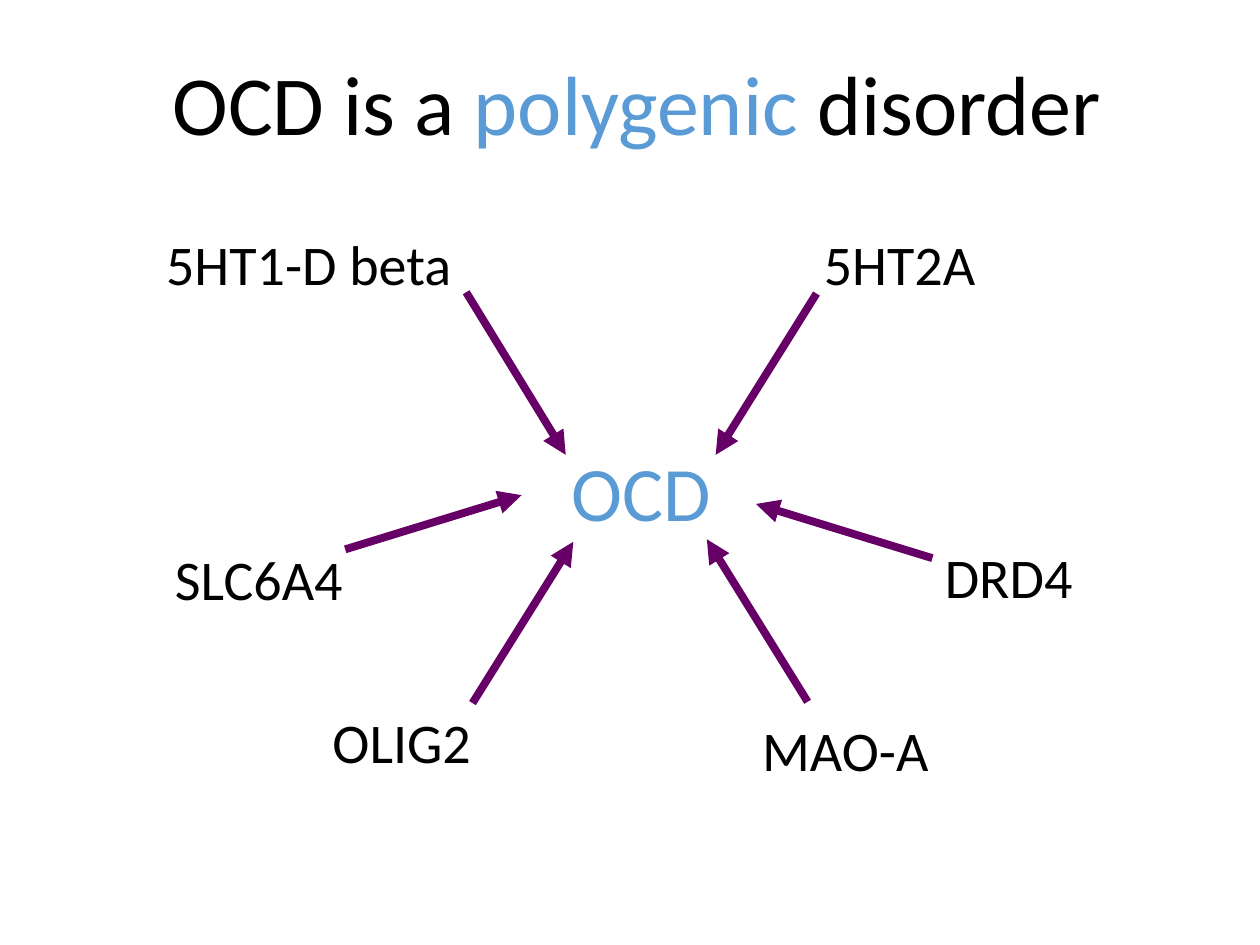
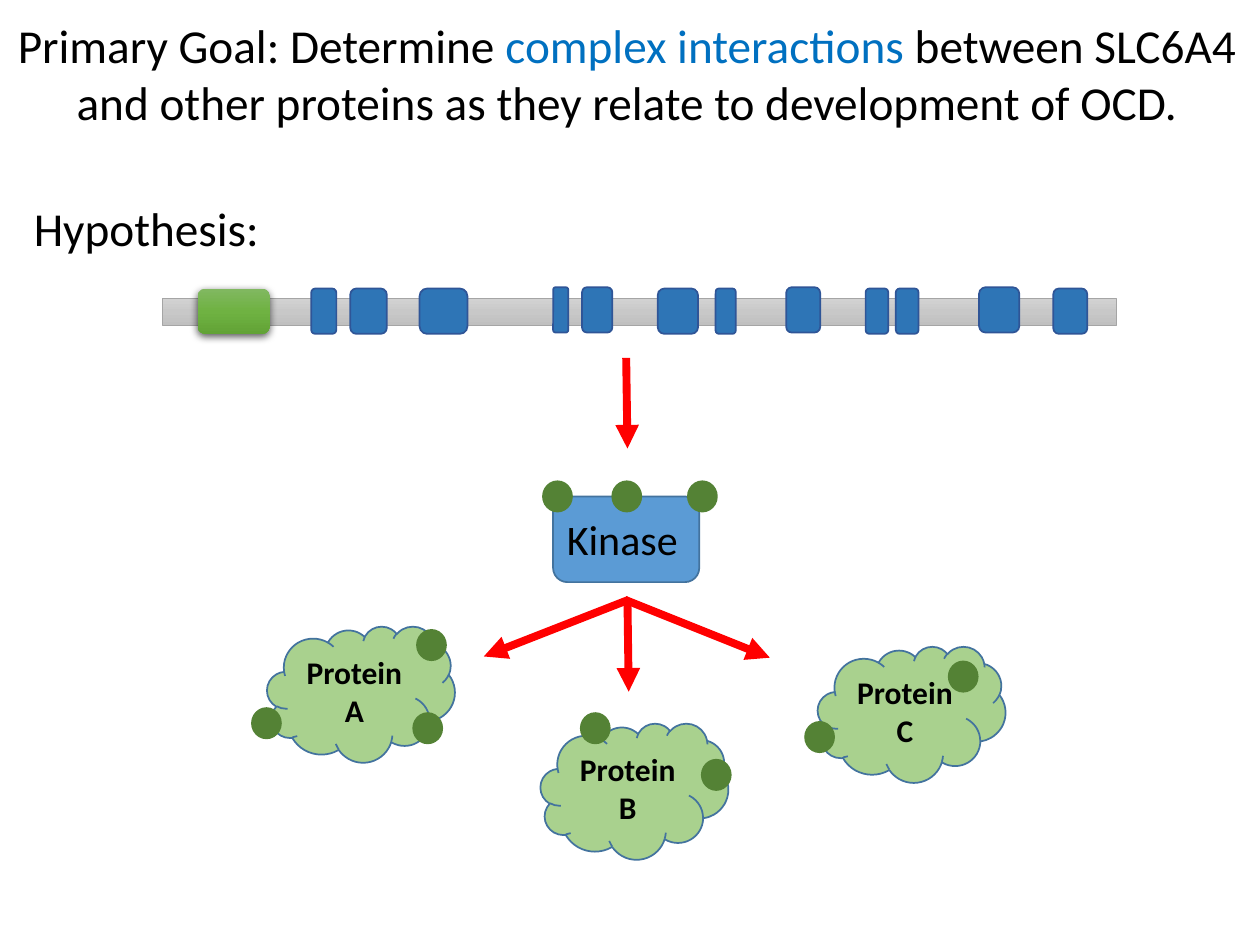
from copy import deepcopy

from lxml import etree
from pptx import Presentation
from pptx.dml.color import RGBColor
from pptx.enum.shapes import MSO_CONNECTOR, MSO_SHAPE
from pptx.enum.text import MSO_ANCHOR, PP_ALIGN
from pptx.oxml.ns import qn
from pptx.util import Emu, Pt

STRAIGHT = MSO_CONNECTOR.STRAIGHT
RECTANGLE = MSO_SHAPE.RECTANGLE
ROUNDED = MSO_SHAPE.ROUNDED_RECTANGLE
OVAL = MSO_SHAPE.OVAL
CLOUD = MSO_SHAPE.CLOUD
MIDDLE = MSO_ANCHOR.MIDDLE
LEFT, CENTER = PP_ALIGN.LEFT, PP_ALIGN.CENTER

PX = 9144
SLIDE_SIZE = (1000, 750)
FONT = "Calibri"

BLACK = RGBColor(0x00, 0x00, 0x00)
SKY = RGBColor(0x5B, 0x9B, 0xD5)
BLUE = RGBColor(0x00, 0x70, 0xC0)
PURPLE = RGBColor(0x66, 0x00, 0x66)
RED = RGBColor(0xFF, 0x00, 0x00)
EXON_BLUE = RGBColor(0x2E, 0x75, 0xB6)
EXON_EDGE = RGBColor(0x2F, 0x55, 0x97)
STEEL = RGBColor(0x43, 0x73, 0x9E)
GRAY = RGBColor(0xA5, 0xA5, 0xA5)
DARK_GREEN = RGBColor(0x54, 0x82, 0x35)
LIGHT_GREEN = RGBColor(0xA9, 0xD1, 0x8E)
GENE_GRAYS = [RGBColor(0xD2, 0xD2, 0xD2), RGBColor(0xC8, 0xC8, 0xC8), RGBColor(0xC0, 0xC0, 0xC0)]
PROMOTER_GREENS = [RGBColor(0x81, 0xB8, 0x61), RGBColor(0x6F, 0xB2, 0x42), RGBColor(0x62, 0xA3, 0x36)]

POLYGENIC_TITLE = [("OCD is a ", BLACK), ("polygenic ", SKY), ("disorder", BLACK)]
GENES = [
    ("SLC6A4", 129, 427, 171),
    ("MAO-A", 595, 563, 171),
    ("DRD4", 740, 426, 171),
    ("5HT2A", 644, 177, 171),
    ("5HT1-D beta", 122, 177, 260),
    ("OLIG2", 254, 557, 171),
]
GENE_ARROWS = [
    (370, 232, 449, 361),
    (274, 436, 414, 393),
    (648, 233, 568, 361),
    (740, 443, 600, 400),
    (375, 558, 455, 430),
    (641, 557, 561, 428),
]

GOAL_TITLE = [
    ("Primary Goal: Determine ", BLACK),
    ("complex interactions ", BLUE),
    ("between SLC6A4 and other proteins as they relate to development of OCD.", BLACK),
]
GENE_BAR = (129, 237, 757, 21)
PROMOTER = (157, 229, 57, 36)
EXON_HEIGHT = 36
EXONS = [
    (247, 229, 20), (278, 229, 29), (333, 229, 38), (439, 228, 12),
    (462, 228, 24), (522, 229, 32), (568, 229, 16), (624, 228, 27),
    (687, 229, 18), (711, 229, 18), (777, 228, 32), (836, 229, 27),
]
KINASE = (439, 394, 116, 68)
GENE_TO_KINASE = (497, 284, 498, 356)
KINASE_TO_PROTEINS = [
    (499, 476, 384, 521),
    (496, 476, 611, 522),
    (498, 477, 499, 549),
]
CLOUD_SIZE = (149, 108)
PROTEINS = [("Protein A", 212, 497), ("Protein B", 429, 574), ("Protein C", 649, 513)]
SITE_SIZE = (23, 24)
KINASE_SITES = [(546, 382), (431, 382), (486, 382)]
PROTEIN_SITES = [
    (200, 562), (557, 603), (461, 566), (331, 500),
    (328, 566), (753, 525), (639, 573),
]


def emu(*lengths):
    return [Emu(length * PX) for length in lengths]


def write(frame, spans, size, align=LEFT, bold=False):
    frame.word_wrap = True
    para = frame.paragraphs[0]
    para.alignment = align
    for text, color in spans:
        span = para.add_run()
        span.text = text
        for name, value in {"name": FONT, "size": Pt(size), "bold": bold}.items():
            setattr(span.font, name, value)
        span.font.color.rgb = color


def add_text(page, place, spans, size, align=LEFT):
    box = page.shapes.add_textbox(*emu(*place))
    write(box.text_frame, spans, size, align)


def add_arrow(page, ends, color):
    arrow = page.shapes.add_connector(STRAIGHT, *emu(*ends))
    arrow.line.color.rgb = color
    arrow.line.width = Pt(4.5)
    etree.SubElement(arrow.line._get_or_add_ln(), qn("a:tailEnd"), type="triangle")
    etree.SubElement(arrow._element.spPr, qn("a:effectLst"))


def fill_gradient(shape, colors):
    shape.fill.gradient()
    shape.fill.gradient_angle = 270
    stop_list = shape._element.spPr.find(".//" + qn("a:gsLst"))
    stop_list.insert(1, deepcopy(stop_list[0]))
    for index, (stop, color) in enumerate(zip(shape.fill.gradient_stops, colors)):
        stop.color.rgb = color
        stop.position = index / (len(colors) - 1)


def add_figure(page, kind, place, fill, edge=None, width=1):
    shape = page.shapes.add_shape(kind, *emu(*place))
    shape.shadow.inherit = False
    if isinstance(fill, list):
        fill_gradient(shape, fill)
    else:
        shape.fill.solid()
        shape.fill.fore_color.rgb = fill
    if edge is None:
        shape.line.fill.background()
    else:
        shape.line.color.rgb = edge
        shape.line.width = Pt(width)
    return shape


def add_drop_shadow(shape):
    effects = shape._element.spPr.find(qn("a:effectLst"))
    shadow = etree.SubElement(
        effects, qn("a:outerShdw"), blurRad=str(Pt(4.5)), dist=str(Pt(1.5)),
        dir="5400000", algn="ctr", rotWithShape="0",
    )
    color = etree.SubElement(shadow, qn("a:srgbClr"), val=str(BLACK))
    etree.SubElement(color, qn("a:alpha"), val="63000")


def add_sites(page, sites):
    for site in sites:
        add_figure(page, OVAL, (*site, *SITE_SIZE), DARK_GREEN, DARK_GREEN)


def build_polygenic(page):
    add_text(page, (127, 36, 759, 91), POLYGENIC_TITLE, 48)
    add_text(page, (444, 348, 143, 84), [("OCD", SKY)], 44)
    for name, left, top, width in GENES:
        add_text(page, (left, top, width, 64), [(name, BLACK)], 32)
    for ends in GENE_ARROWS:
        add_arrow(page, ends, PURPLE)


def build_hypothesis(page):
    add_text(page, (-17, 8, 1029, 101), GOAL_TITLE, 27, CENTER)
    add_text(page, (17, 153, 296, 56), [("Hypothesis:", BLACK)], 27)
    add_arrow(page, GENE_TO_KINASE, RED)

    add_figure(page, RECTANGLE, GENE_BAR, GENE_GRAYS, GRAY, 0.5)
    add_drop_shadow(add_figure(page, ROUNDED, PROMOTER, PROMOTER_GREENS))
    for left, top, width in EXONS:
        add_figure(page, ROUNDED, (left, top, width, EXON_HEIGHT), EXON_BLUE, EXON_EDGE)

    add_figure(page, ROUNDED, KINASE, SKY, STEEL)
    add_text(page, (440, 403, 112, 50), [("Kinase", BLACK)], 24)
    add_sites(page, KINASE_SITES)
    for ends in KINASE_TO_PROTEINS:
        add_arrow(page, ends, RED)

    for name, left, top in PROTEINS:
        protein = add_figure(page, CLOUD, (left, top, *CLOUD_SIZE), LIGHT_GREEN, STEEL)
        protein.text_frame.vertical_anchor = MIDDLE
        write(protein.text_frame, [(name, BLACK)], 18, CENTER, True)
    add_sites(page, PROTEIN_SITES)


def main():
    deck = Presentation()
    deck.slide_width, deck.slide_height = emu(*SLIDE_SIZE)
    for build in (build_polygenic, build_hypothesis):
        build(deck.slides.add_slide(deck.slide_layouts[6]))
    deck.save("out.pptx")


if __name__ == "__main__":
    main()
